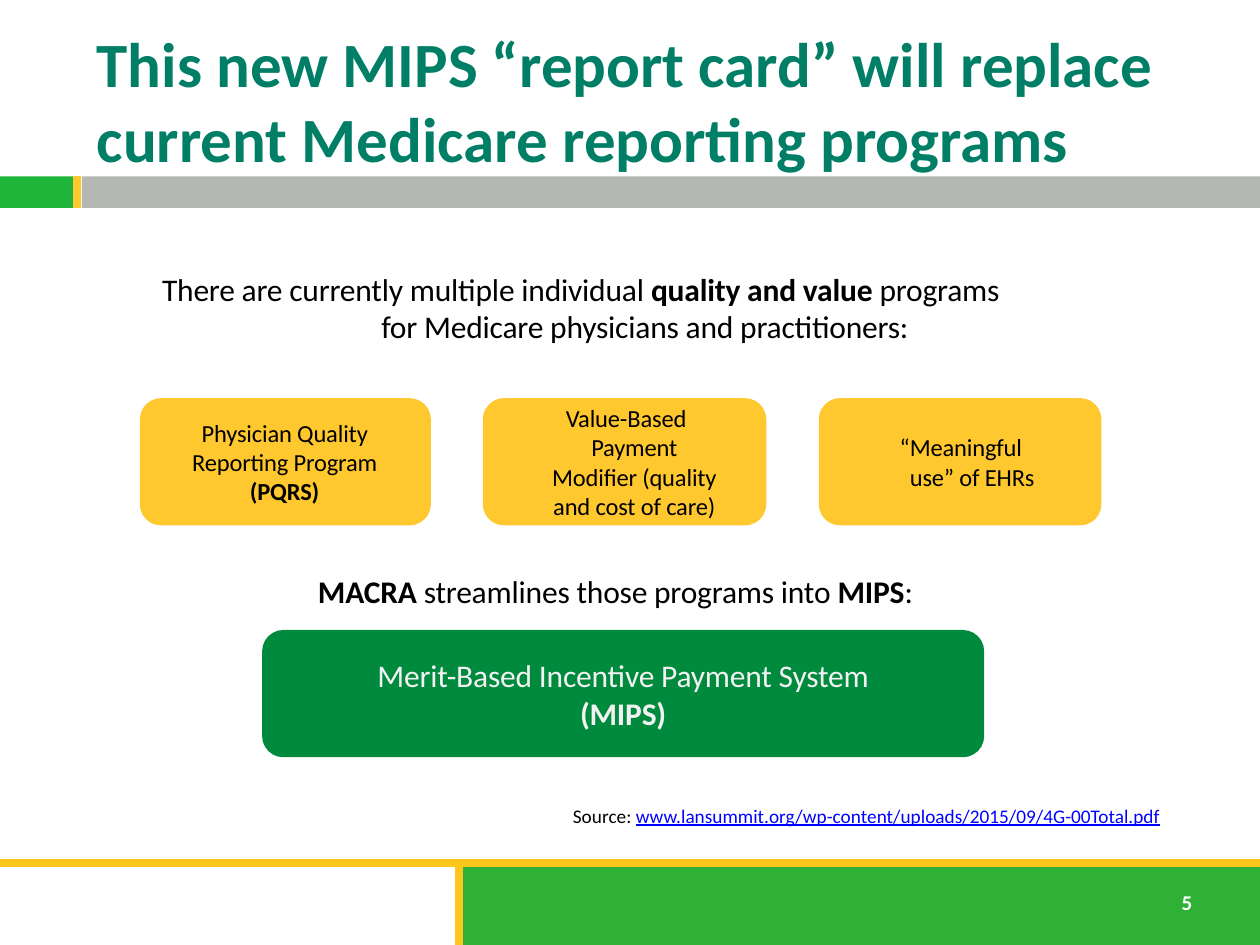
import pptx
import pptx.dml.color
import pptx.enum.shapes
import pptx.enum.text
import pptx.oxml.ns
import pptx.util
from lxml import etree

Pt = pptx.util.Pt
SHAPES = pptx.enum.shapes.MSO_SHAPE
ALIGN = pptx.enum.text.PP_ALIGN
ANCHOR = pptx.enum.text.MSO_ANCHOR
YELLOW = "FFC82E"


def color(value):
    """Return the colour for a hex string."""
    return pptx.dml.color.RGBColor.from_string(value)


def add_block(slide, box, fill, kind=SHAPES.RECTANGLE):
    """Add a filled shape without outline or shadow."""
    shape = slide.shapes.add_shape(kind, *map(Pt, box))
    shape.shadow.inherit = False
    shape.fill.solid()
    shape.fill.fore_color.rgb = color(fill)
    shape.line.fill.background()
    return shape


def add_rule(slide, start, end, line_color):
    """Add a thick straight line between two points."""
    rule = slide.shapes.add_connector(
        pptx.enum.shapes.MSO_CONNECTOR.STRAIGHT, *map(Pt, start + end))
    rule.line.color.rgb = color(line_color)
    rule.line.width = Pt(4.5)
    etree.SubElement(rule._element.spPr, pptx.oxml.ns.qn("a:effectLst"))


def add_textbox(slide, box, margin=None, anchor=ANCHOR.TOP):
    """Add a wrapping text box and return its text frame."""
    frame = slide.shapes.add_textbox(*map(Pt, box)).text_frame
    frame.word_wrap = True
    frame.vertical_anchor = anchor
    if margin is not None:
        frame.margin_left = frame.margin_right = Pt(margin)
        frame.margin_top = frame.margin_bottom = Pt(margin)
    return frame


def write(paragraph, runs, size, font_color="000000", align=ALIGN.LEFT,
          indents=(0, 0, 0), spacing=-0.1):
    """Write (text, bold) runs; indents are left, right and first line."""
    paragraph.alignment = align
    properties = paragraph._p.get_or_add_pPr()
    for name, indent in zip(("marL", "marR", "indent"), indents):
        properties.set(name, str(int(Pt(indent))))
    paragraph.font.name = "Calibri"
    paragraph.font.size = Pt(size)
    paragraph.font.color.rgb = color(font_color)
    for index, (text, bold) in enumerate(runs):
        for part, line in enumerate(text.split("\n")):
            if part:
                paragraph.add_line_break()
            run = paragraph.add_run()
            run.text = line
            if len(runs) > 1:
                run.font.bold = bold
            run._r.get_or_add_rPr().set("spc", str(round(spacing * 100)))
    if len(runs) == 1:
        paragraph.font.bold = runs[0][1]


def add_header(slide, left, top, width):
    """Add the title and the coloured band under it."""
    band_top, band_height = top + 100.8, 18
    add_block(slide, (left, band_top, 42, band_height), "1EB53A")
    add_block(slide, (left + 46.8, band_top, width - 46.8, band_height), "B5B7B4")
    add_rule(slide, (left + 44.2, band_top),
             (left + 44.2, band_top + band_height), YELLOW)
    frame = add_textbox(slide, (left + 48.2, top + 18, 642.2, 77.8),
                        anchor=ANCHOR.MIDDLE)
    title = "This new MIPS “report card” will replace current Medicare reporting programs"
    write(frame.paragraphs[0], [(title, True)], 36, "007E66", spacing=0)


def add_footer(slide, left, top, width, height):
    """Add the footer band with its rules and the page number."""
    divider = left + 262.1
    add_block(slide, (divider, top, left + width - divider, height), "2EB135")
    add_rule(slide, (left, top), (left + width, top), "FFC61E")
    add_rule(slide, (divider, top), (divider, top + height), "FFC61E")
    frame = add_textbox(slide, (left + 668.2, top + 11.7, 28.8, 21.6))
    write(frame.paragraphs[0], [("5", True)], 12, "FFFFFF", spacing=0)


def add_programs(slide, left, top):
    """Add the introduction and the row of current programs."""
    frame = add_textbox(slide, (left + 11.5, top, 537.8, 43.9), 0)
    write(frame.paragraphs[0], [
        ("There are currently multiple individual ", False),
        ("quality and value ", True),
        ("programs\nfor Medicare physicians and practitioners:", False),
    ], 18, indents=(126.5, 0, -125.3))
    cards = [
        (0, 166.3, (18.7, 19.5, 0),
         [("Physician Quality Reporting Program ", False), ("(PQRS)", True)]),
        (196, 162, (26.6, 15.5, -9.4),
         [("Value-Based Payment Modifier (quality and cost of care)", False)]),
        (388, 161.5, (35.3, 21.5, -13),
         [("“Meaningful use” of EHRs", False)]),
    ]
    for offset, width, indents, runs in cards:
        card = add_block(slide, (left + offset, top + 73.4, width, 72.7),
                         YELLOW, SHAPES.ROUNDED_RECTANGLE)
        card.text_frame.vertical_anchor = ANCHOR.MIDDLE
        card.text_frame.word_wrap = True
        write(card.text_frame.paragraphs[0], runs, 14, align=ALIGN.CENTER,
              indents=indents)


def add_result(slide, left, top, width):
    """Add the lead-in and the box with the combined program."""
    frame = add_textbox(slide, (left + 31, top, 366.5, 22.3), 0)
    write(frame.paragraphs[0], [
        ("MACRA ", True), ("streamlines those programs into ", False),
        ("MIPS", True), (":", False),
    ], 18, indents=(0.9, 0, 0))
    panel = add_block(slide, (left, top + 33.1, width, 72.7), "008A3E",
                      SHAPES.ROUNDED_RECTANGLE)
    frame = panel.text_frame
    frame.word_wrap = True
    frame.vertical_anchor = ANCHOR.MIDDLE
    write(frame.paragraphs[0], [("Merit-Based Incentive Payment System", False)],
          18, "F2F2F2", ALIGN.CENTER)
    write(frame.add_paragraph(), [("(MIPS)", True)], 18, "F2F2F2", ALIGN.CENTER)


def add_source(slide, left, top, width, height):
    """Add the source line with its underlined address."""
    paragraph = add_textbox(slide, (left, top, width, height)).paragraphs[0]
    write(paragraph, [
        ("Source: ", False),
        ("www.lansummit.org/wp-content/uploads/2015/09/4G-00Total.pdf", False),
    ], 11, align=ALIGN.RIGHT, indents=(0, 8, 0), spacing=0)
    address = paragraph.runs[1]
    address.font.underline = True
    address.font.color.rgb = color("0000FF")


def main():
    """Build and save the slide."""
    presentation = pptx.Presentation()
    presentation.slide_width, presentation.slide_height = Pt(720), Pt(540)
    slide = presentation.slides.add_slide(presentation.slide_layouts[6])
    add_header(slide, 0, 0, 720)
    add_programs(slide, 79.9, 154.1)
    add_result(slide, 149.8, 326.9, 412.6)
    add_source(slide, 54, 455.8, 624.2, 20.9)
    add_footer(slide, 0, 493, 720, 47)
    presentation.save("out.pptx")


if __name__ == "__main__":
    main()
